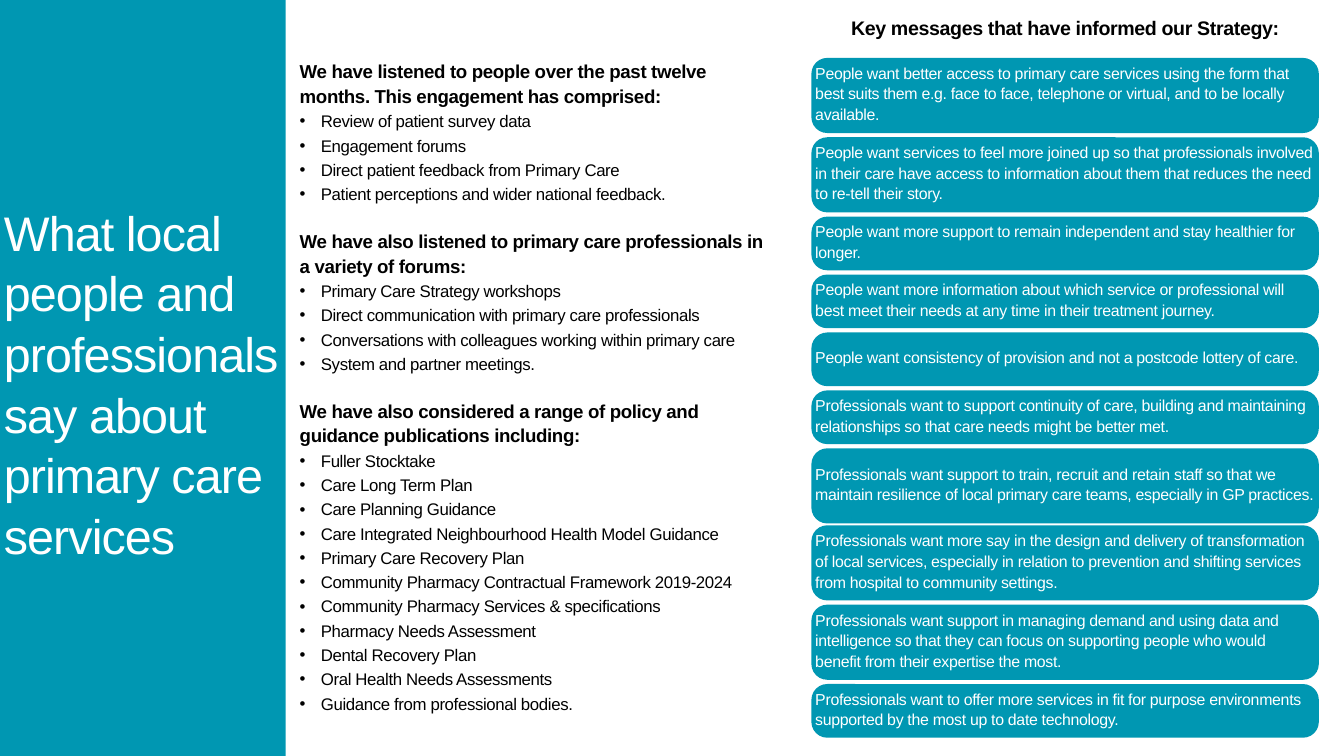
"""Build a slide of engagement sources and key messages for a primary care strategy."""
from lxml import etree
from pptx import Presentation
from pptx import util as u
from pptx.dml import color
from pptx.enum import shapes, text
from pptx.oxml import ns

HUE = {"teal": "0097B2", "white": "FFFFFF", "black": "000000"}
FONT = "Arial"
TITLE = "What local people and professionals say about primary care services"
HEAD = "Key messages that have informed our Strategy:"
PARTS = [
    ("We have listened to people over the past twelve months. This engagement has comprised:", [
        "Review of patient survey data",
        "Engagement forums",
        "Direct patient feedback from Primary Care",
        "Patient perceptions and wider national feedback.",
    ]),
    ("We have also listened to primary care professionals in a variety of forums:", [
        "Primary Care Strategy workshops",
        "Direct communication with primary care professionals",
        "Conversations with colleagues working within primary care",
        "System and partner meetings.",
    ]),
    ("We have also considered a range of policy and guidance publications including:", [
        "Fuller Stocktake",
        "Care Long Term Plan",
        "Care Planning Guidance",
        "Care Integrated Neighbourhood Health Model Guidance",
        "Primary Care Recovery Plan",
        "Community Pharmacy Contractual Framework 2019-2024",
        "Community Pharmacy Services & specifications",
        "Pharmacy Needs Assessment",
        "Dental Recovery Plan",
        "Oral Health Needs Assessments",
        "Guidance from professional bodies.",
    ]),
]
TALL, LOW = 2.84, 2.03
GAP, TIGHT = 0.16, 0.07
CARDS = [
    (TALL, GAP, "People want better access to primary care services using the form that best suits them e.g. face to face, telephone or virtual, and to be locally available."),
    (TALL, GAP, "People want services to feel more joined up so that professionals involved in their care have access to information about them that reduces the need to re-tell their story."),
    (LOW, GAP, "People want more support to remain independent and stay healthier for longer."),
    (LOW, GAP, "People want more information about which service or professional will best meet their needs at any time in their treatment journey."),
    (LOW, GAP, "People want consistency of provision and not a postcode lottery of care."),
    (LOW, GAP, "Professionals want to support continuity of care, building and maintaining relationships so that care needs might be better met."),
    (TALL, TIGHT, "Professionals want support to train, recruit and retain staff so that we maintain resilience of local primary care teams, especially in GP practices."),
    (TALL, GAP, "Professionals want more say in the design and delivery of transformation of local services, especially in relation to prevention and shifting services from hospital to community settings."),
    (TALL, GAP, "Professionals want support in managing demand and using data and intelligence so that they can focus on supporting people who would benefit from their expertise the most."),
    (LOW, GAP, "Professionals want to offer more services in fit for purpose environments supported by the most up to date technology."),
]
LEFT, TOP, WIDE, ROUND = 30.67, 2.19, 19.18, 0.6


def write(frame, words, size, lead, hue="black", bold=False, track=-0.4,
          align=text.PP_ALIGN.LEFT, before=0, bullet=False):
    para = frame.paragraphs[0]
    if para.runs:
        para = frame.add_paragraph()
    para.alignment = align
    para.line_spacing, para.space_before = u.Pt(lead), u.Pt(before)
    run = para.add_run()
    run.text = words
    run.font.name, run.font.size, run.font.bold = FONT, u.Pt(size), bold
    run.font.color.rgb = color.RGBColor.from_string(HUE[hue])
    run.font._element.set("spc", str(round(track * 100)))
    if bullet:
        props = para._p.get_or_add_pPr()
        hang = u.Cm(0.8)
        props.set("marL", str(hang))
        props.set("indent", str(-hang))
        etree.SubElement(props, ns.qn("a:buFont"), typeface=FONT)
        etree.SubElement(props, ns.qn("a:buChar"), char="•")


def inset(frame, side=0, top=0, base=0):
    frame.word_wrap = True
    frame.margin_left = frame.margin_right = u.Cm(side)
    frame.margin_top, frame.margin_bottom = u.Cm(top), u.Cm(base)
    return frame


def box(slide, *place):
    return inset(slide.shapes.add_textbox(*map(u.Cm, place)).text_frame)


def block(slide, kind, *place):
    shape = slide.shapes.add_shape(kind, *map(u.Cm, place))
    shape.shadow.inherit = False
    shape.fill.solid()
    shape.fill.fore_color.rgb = color.RGBColor.from_string(HUE["teal"])
    shape.line.fill.background()
    return shape


def main():
    deck = Presentation()
    deck.slide_width, deck.slide_height = u.Cm(50.8), u.Cm(28.58)
    slide = deck.slides.add_slide(deck.slide_layouts[6])

    block(slide, shapes.MSO_SHAPE.RECTANGLE, 0, 0, 10.8, 28.58)
    write(box(slide, 0.15, 7.57, 10.36, 13.74), TITLE, 52, 65, hue="white", track=-1)

    frame = box(slide, 11.33, 2.21, 17.68, 24.92)
    for num, (lead, items) in enumerate(PARTS):
        write(frame, lead, 20, 26, bold=True, before=26 if num else 0)
        for item in items:
            write(frame, item, 18, 26, bullet=True)

    top = TOP
    for high, gap, words in CARDS:
        card = block(slide, shapes.MSO_SHAPE.ROUNDED_RECTANGLE, LEFT, top, WIDE, high)
        card.adjustments[0] = ROUND / high
        frame = inset(card.text_frame, side=-0.03, top=-0.1, base=0.1)
        frame.vertical_anchor = text.MSO_ANCHOR.MIDDLE
        write(frame, words, 17, 22.1, hue="white", track=-0.34)
        top += high + gap

    write(box(slide, 32.08, 0.53, 16.36, 0.91), HEAD, 21, 27.3, bold=True,
          align=text.PP_ALIGN.CENTER)
    deck.save("out.pptx")


if __name__ == "__main__":
    main()
